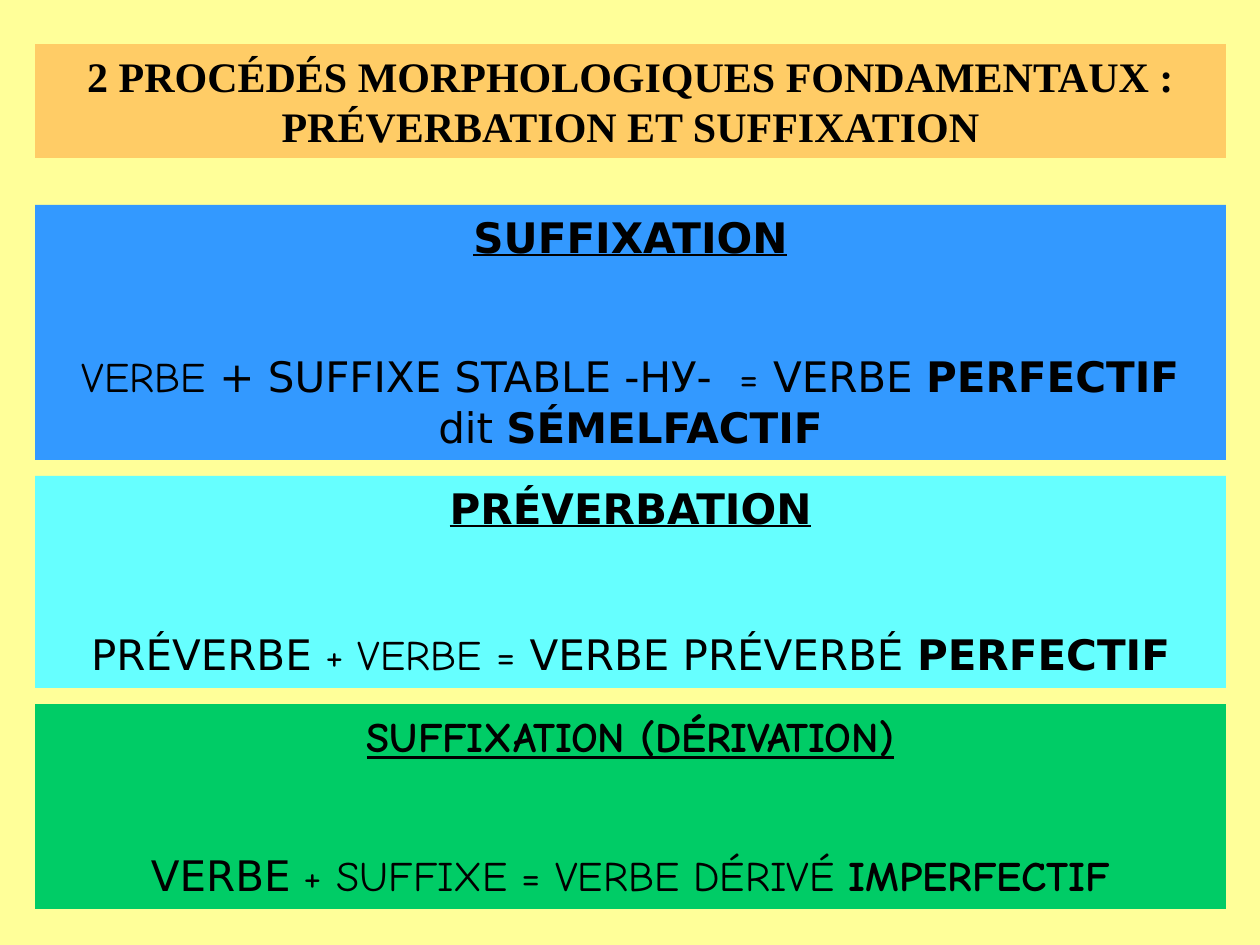
from dataclasses import dataclass

from pptx import Presentation
from pptx.dml.color import RGBColor
from pptx.enum.shapes import MSO_SHAPE
from pptx.enum.text import MSO_ANCHOR, MSO_AUTO_SIZE, PP_ALIGN
from pptx.util import Pt

RECT = MSO_SHAPE.RECTANGLE
CENTER = PP_ALIGN.CENTER
TOP = MSO_ANCHOR.TOP
NO_FIT = MSO_AUTO_SIZE.NONE
TITLE_ONLY = 5
EMU_PER_PX = 914400 / 126


def px(n):
    return round(n * EMU_PER_PX)


@dataclass(frozen=True)
class Theme:
    background: str = "FFFF99"
    title_fill: str = "FFCC66"
    blue: str = "3399FF"
    cyan: str = "66FFFF"
    green: str = "00CC66"
    ink: str = "000000"
    serif: str = "Times New Roman"
    sans: str = "DejaVu Sans"
    comic: str = "Comic Neue"
    size: int = 24


class Deck:
    def __init__(self, prs, theme):
        self.theme = theme
        self.slide = prs.slides.add_slide(prs.slide_layouts[TITLE_ONLY])
        fill = self.slide.background.fill
        fill.solid()
        fill.fore_color.rgb = RGBColor.from_string(theme.background)

    def frame(self, sp, box, color):
        sp.left, sp.top, sp.width, sp.height = map(px, box)
        sp.fill.solid()
        sp.fill.fore_color.rgb = RGBColor.from_string(color)
        sp.line.fill.background()
        tf = sp.text_frame
        tf.word_wrap = True
        tf.auto_size = NO_FIT
        tf.vertical_anchor = TOP
        return tf

    def add_runs(self, p, runs, underline=False, before=0):
        p.alignment = CENTER
        p.space_before = Pt(before)
        for text, font, bold in runs:
            r = p.add_run()
            r.text = text
            r.font.name = font
            r.font.size = Pt(self.theme.size)
            r.font.bold = bold
            r.font.underline = underline
            r.font.color.rgb = RGBColor.from_string(self.theme.ink)

    def title(self, box, text):
        tf = self.frame(self.slide.shapes.title, box, self.theme.title_fill)
        self.add_runs(tf.paragraphs[0], [(text, self.theme.serif, True)])

    def panel(self, box, color, heading, formula, gap):
        sp = self.slide.shapes.add_shape(RECT, *map(px, box))
        sp.shadow.inherit = False
        tf = self.frame(sp, box, color)
        self.add_runs(tf.paragraphs[0], [heading], underline=True)
        self.add_runs(tf.add_paragraph(), formula, before=gap)


def main():
    prs = Presentation()
    prs.slide_width, prs.slide_height = px(1260), px(945)
    theme = Theme()
    sans, comic = theme.sans, theme.comic
    deck = Deck(prs, theme)
    left, width, spacing = 35, 1191, 16

    # Title band
    deck.title((left, 44, width, 114),
               "2 PROCÉDÉS MORPHOLOGIQUES FONDAMENTAUX : PRÉVERBATION ET SUFFIXATION")

    # Panels: height, colour, heading, formula, gap above the formula in points
    panels = [
        (255, theme.blue, ("SUFFIXATION", sans, True),
         [("VERBE", comic, False), (" + SUFFIXE STABLE -НУ- ", sans, False),
          (" = ", comic, False), ("VERBE ", sans, False),
          ("PERFECTIF ", sans, True), ("dit ", sans, False),
          ("SÉMELFACTIF", sans, True)], 51),
        (212, theme.cyan, ("PRÉVERBATION", sans, True),
         [("PRÉVERBE ", sans, False), ("+ VERBE = ", comic, False),
          ("VERBE PRÉVERBÉ ", sans, False), ("PERFECTIF", sans, True)], 55),
        (205, theme.green, ("SUFFIXATION (DÉRIVATION)", comic, True),
         [("VERBE ", sans, False), ("+ SUFFIXE = VERBE DÉRIVÉ ", comic, False),
          ("IMPERFECTIF", comic, True)], 51),
    ]
    top = 205
    for height, color, heading, formula, gap in panels:
        deck.panel((left, top, width, height), color, heading, formula, gap)
        top += height + spacing

    prs.save("out.pptx")


if __name__ == "__main__":
    main()
